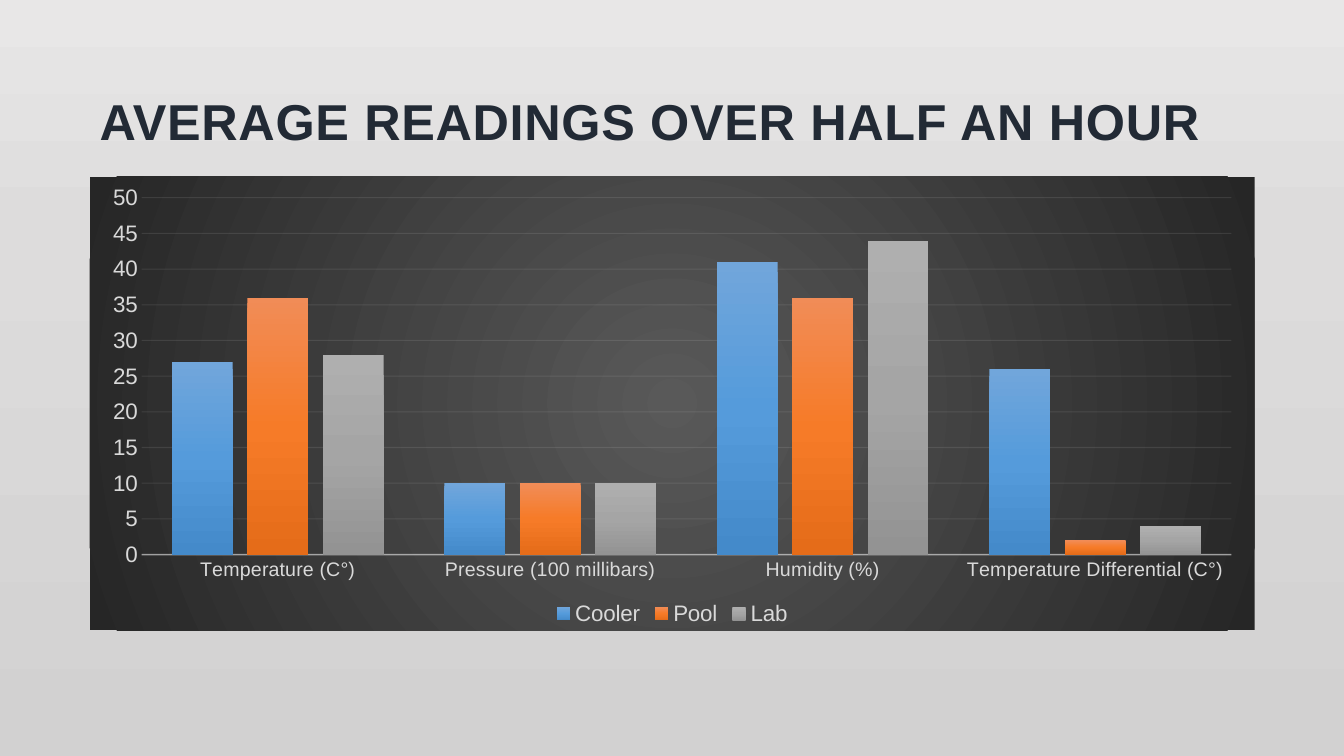
from dataclasses import dataclass
from typing import Any, Optional

from pptx import Presentation
from pptx.chart.data import CategoryChartData as ChartData
from pptx.dml.color import RGBColor
from pptx.enum.chart import XL_CHART_TYPE as ChartType
from pptx.enum.chart import XL_LEGEND_POSITION as LegendPosition
from pptx.enum.chart import XL_TICK_MARK as TickMark
from pptx.enum.text import MSO_ANCHOR as Anchor
from pptx.oxml import parse_xml
from pptx.oxml.ns import nsdecls
from pptx.util import Cm, Pt

FONT = "Arial"
TITLE_INK = RGBColor(0x22, 0x2A, 0x35)
CHART_INK = RGBColor(0xD9, 0xD9, 0xD9)
RULE = RGBColor(0xF2, 0xF2, 0xF2)
PAGE_TOP = RGBColor(0xE8, 0xE7, 0xE7)
PAGE_MIDDLE = RGBColor(0xDD, 0xDC, 0xDC)
PAGE_BOTTOM = RGBColor(0xD2, 0xD1, 0xD1)
PANEL_CENTRE = RGBColor(0x59, 0x59, 0x59)
PANEL_EDGE = RGBColor(0x26, 0x26, 0x26)
BLUES = (RGBColor(0x71, 0xA6, 0xDB), RGBColor(0x55, 0x9B, 0xDB), RGBColor(0x44, 0x8A, 0xCA))
ORANGES = (RGBColor(0xF1, 0x8C, 0x57), RGBColor(0xF6, 0x7B, 0x28), RGBColor(0xE5, 0x6C, 0x19))
GREYS = (RGBColor(0xAF, 0xAF, 0xAF), RGBColor(0xA5, 0xA5, 0xA5), RGBColor(0x93, 0x93, 0x93))

LEFT, WIDTH = Cm(2.26), Cm(29.36)
DOWNWARD = '<a:lin ang="5400000" scaled="0"/>'
RADIAL = ('<a:path path="circle"><a:fillToRect l="50000" t="50000" '
          'r="50000" b="50000"/></a:path>')
CATEGORIES = ("Temperature (C°)", "Pressure (100 millibars)",
              "Humidity (%)", "Temperature Differential (C°)")


@dataclass(frozen=True)
class Room:
    name: str
    readings: tuple[float, ...]
    shades: tuple[RGBColor, RGBColor, RGBColor]


ROOMS = (
    Room("Cooler", (27, 10, 41, 26), BLUES),
    Room("Pool", (36, 10, 36, 2), ORANGES),
    Room("Lab", (28, 10, 44, 4), GREYS),
)


def apply_format(target: Any, values: dict[str, Any]) -> None:
    for name, value in values.items():
        setattr(target, name, value)


def style_font(font: Any, size: float, color: RGBColor, bold: Optional[bool] = None) -> None:
    apply_format(font, {"name": FONT, "size": Pt(size), "bold": bold})
    font.color.rgb = color


def gradient(stops: dict[int, RGBColor], direction: str = DOWNWARD) -> Any:
    marks = "".join(f'<a:gs pos="{percent * 1000}"><a:srgbClr val="{color}"/></a:gs>'
                    for percent, color in stops.items())
    return parse_xml(f'<a:gradFill {nsdecls("a")} rotWithShape="1">'
                     f'<a:gsLst>{marks}</a:gsLst>{direction}</a:gradFill>')


def swap_solid(root: Any, location: str, fill: Any) -> None:
    solid = root.xpath(f"{location}/a:solidFill")[0]
    solid.getparent().replace(solid, fill)


def set_opacity(root: Any, location: str, percent: int) -> None:
    for color in root.xpath(f"{location}//a:ln//a:srgbClr"):
        color.append(parse_xml(f'<a:alpha {nsdecls("a")} val="{percent * 1000}"/>'))


def add_background(slide: Any) -> None:
    slide.background.fill.solid()
    slide.background.fill.fore_color.rgb = PAGE_MIDDLE
    swap_solid(slide.element, ".//p:bgPr",
               gradient({0: PAGE_TOP, 31: PAGE_MIDDLE, 100: PAGE_BOTTOM}))


def add_title(slide: Any, text: str) -> None:
    frame = slide.shapes.add_textbox(LEFT, Cm(0.76), WIDTH, Cm(3.18)).text_frame
    apply_format(frame, {"word_wrap": True, "vertical_anchor": Anchor.BOTTOM})
    paragraph = frame.paragraphs[0]
    paragraph.line_spacing = 0.9
    run = paragraph.add_run()
    run.text = text
    style_font(run.font, 36, TITLE_INK, bold=True)
    run.font._element.set("spc", "50")


def style_axis(axis: Any, size: float, values: dict[str, Any]) -> None:
    apply_format(axis, {"major_tick_mark": TickMark.NONE,
                        "minor_tick_mark": TickMark.NONE, **values})
    style_font(axis.tick_labels.font, size, CHART_INK)


def style_rule(line: Any, width: float) -> None:
    line.width = Pt(width)
    line.color.rgb = RULE


def add_readings_chart(slide: Any) -> None:
    data = ChartData()
    data.categories = CATEGORIES
    for room in ROOMS:
        data.add_series(room.name, room.readings)
    chart = slide.shapes.add_chart(ChartType.COLUMN_CLUSTERED, LEFT, Cm(4.45),
                                   WIDTH, Cm(11.43), data).chart
    apply_format(chart, {"has_title": False, "has_legend": True})
    style_font(chart.font, 10, CHART_INK)

    # Legend
    apply_format(chart.legend, {"position": LegendPosition.BOTTOM,
                                "include_in_layout": False})
    style_font(chart.legend.font, 16, CHART_INK)

    # Axes and gridlines
    style_axis(chart.category_axis, 14, {"has_major_gridlines": False})
    style_axis(chart.value_axis, 16, {"has_major_gridlines": True, "minimum_scale": 0,
                                      "maximum_scale": 50, "major_unit": 5})
    style_rule(chart.category_axis.format.line, 1)
    style_rule(chart.value_axis.major_gridlines.format.line, 0.75)
    chart.value_axis.format.line.fill.background()
    set_opacity(chart.element, ".//c:catAx/c:spPr", 54)
    set_opacity(chart.element, ".//c:majorGridlines", 10)

    # Columns
    plot = chart.plots[0]
    apply_format(plot, {"gap_width": 100, "overlap": -24, "vary_by_categories": False})
    for series, room in zip(plot.series, ROOMS):
        series.format.fill.solid()
        series.format.fill.fore_color.rgb = room.shades[1]
        swap_solid(series._element, "./c:spPr", gradient(dict(zip((0, 50, 100), room.shades))))

    # Dark panel behind the plot
    panel = parse_xml(f'<c:spPr {nsdecls("c", "a")}><a:ln><a:noFill/></a:ln></c:spPr>')
    panel.insert(0, gradient({0: PANEL_CENTRE, 100: PANEL_EDGE}, RADIAL))
    chart.element.xpath("./c:chart")[0].addnext(panel)


def main() -> None:
    presentation = Presentation()
    apply_format(presentation, {"slide_width": Cm(33.87), "slide_height": Cm(19.05)})
    slide = presentation.slides.add_slide(presentation.slide_layouts[6])
    add_background(slide)
    add_title(slide, "AVERAGE READINGS OVER HALF AN HOUR")
    add_readings_chart(slide)
    presentation.save("out.pptx")


if __name__ == "__main__":
    main()
